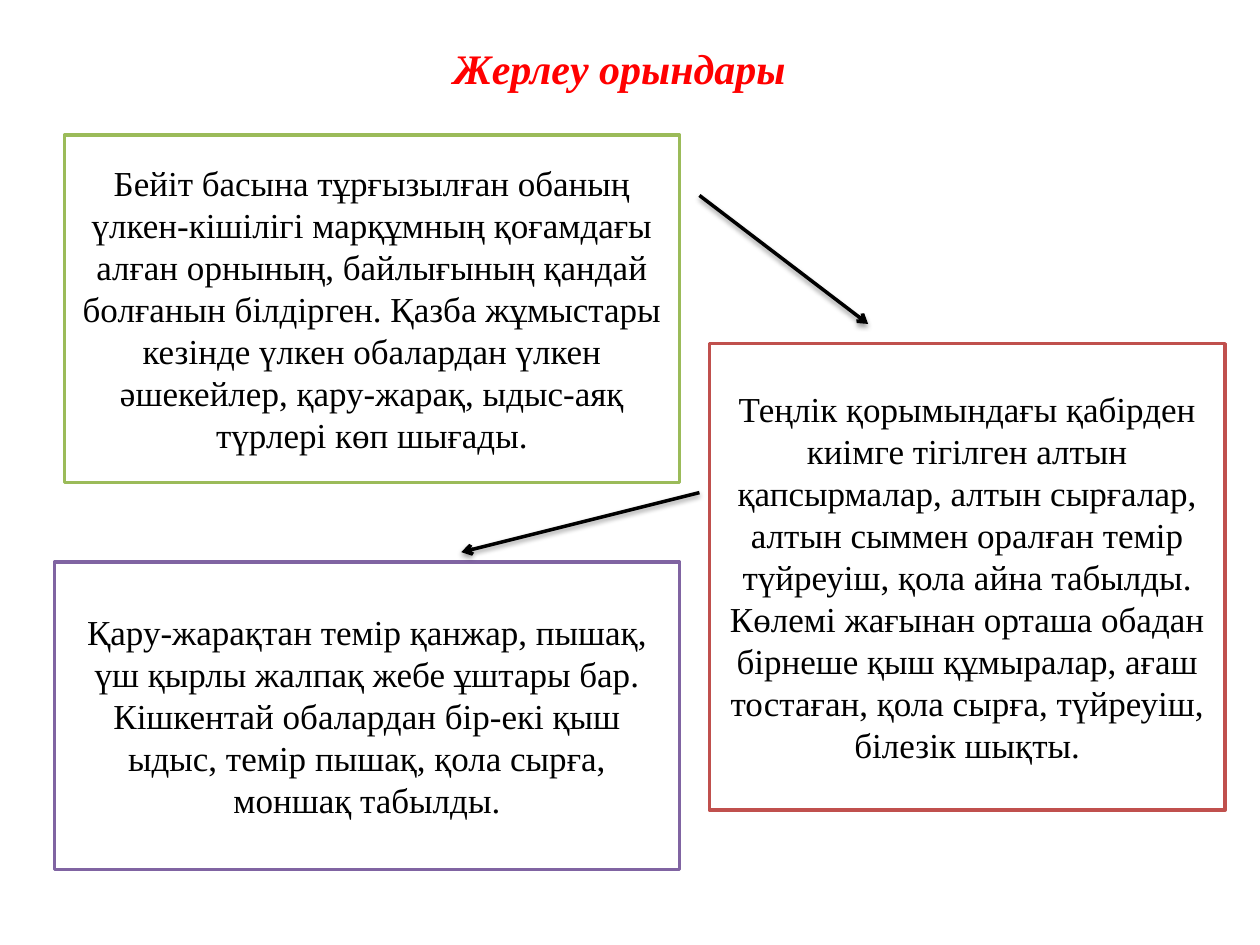
from lxml import etree
from pptx import Presentation
from pptx.dml.color import RGBColor
from pptx.enum.shapes import MSO_CONNECTOR, MSO_SHAPE
from pptx.enum.text import MSO_ANCHOR, MSO_AUTO_SIZE, PP_ALIGN
from pptx.oxml import parse_xml
from pptx.oxml.ns import qn
from pptx.util import Cm, Pt

RECTANGLE = MSO_SHAPE.RECTANGLE
STRAIGHT = MSO_CONNECTOR.STRAIGHT
MIDDLE = MSO_ANCHOR.MIDDLE
CENTER = PP_ALIGN.CENTER
FIT_SHAPE = MSO_AUTO_SIZE.SHAPE_TO_FIT_TEXT

FONT = "Times New Roman"
COLORS = {
    "title": "FF0000",
    "text": "000000",
    "paper": "FFFFFF",
    "arrow": "000000",
    "green": "9BBB59",
    "red": "C0504D",
    "purple": "8064A2",
}
SHADOW = (
    '<a:effectLst xmlns:a="http://schemas.openxmlformats.org/drawingml/2006/main">'
    '<a:outerShdw blurRad="{blur}" dist="{distance}" dir="5400000" rotWithShape="0">'
    '<a:srgbClr val="{color}"><a:alpha val="38000"/></a:srgbClr>'
    "</a:outerShdw></a:effectLst>"
)

TITLE = "Жерлеу орындары"
CARDS = [
    ("green", (1.3, 2.72, 12.4, 7.01),
     "Бейіт басына тұрғызылған обаның үлкен-кішілігі марқұмның қоғамдағы "
     "алған орнының, байлығының қандай болғанын білдірген. Қазба жұмыстары "
     "кезінде үлкен обалардан үлкен əшекейлер, қару-жарақ, ыдыс-аяқ "
     "түрлері көп шығады."),
    ("red", (14.3, 6.93, 10.4, 9.4),
     "Теңлік қорымындағы қабірден киімге тігілген алтын қапсырмалар, алтын "
     "сырғалар, алтын сыммен оралған темір түйреуіш, қола айна табылды. "
     "Көлемі жағынан орташа обадан бірнеше қыш құмыралар, ағаш тостаған, "
     "қола сырға, түйреуіш, білезік шықты."),
    ("purple", (1.1, 11.33, 12.6, 6.2),
     "Қару-жарақтан темір қанжар, пышақ, үш қырлы жалпақ жебе ұштары бар. "
     "Кішкентай обалардан бір-екі қыш ыдыс, темір пышақ, қола сырға, "
     "моншақ табылды."),
]
ARROWS = [
    ((14.1, 3.94), (17.5, 6.53)),
    ((14.1, 9.93), (9.3, 11.13)),
]


def color(name):
    """Return the named colour."""
    return RGBColor.from_string(COLORS[name])


def write(paragraph, text, size, color_name):
    """Fill a paragraph with text in the slide's typeface."""
    paragraph.text = text
    paragraph.font.name = FONT
    paragraph.font.size = Pt(size)
    paragraph.font.color.rgb = color(color_name)


def add_title(slide, box):
    """Place the heading in the given box."""
    shape = slide.shapes.add_textbox(*map(Cm, box))
    shape.text_frame.word_wrap = False
    shape.text_frame.auto_size = FIT_SHAPE
    paragraph = shape.text_frame.paragraphs[0]
    write(paragraph, TITLE, 24, "title")
    paragraph.font.bold = True
    paragraph.font.italic = True


def add_card(slide, box, border, text):
    """Place an outlined card with centred text in the given box."""
    shape = slide.shapes.add_shape(RECTANGLE, *map(Cm, box))
    shape.shadow.inherit = False
    shape.fill.solid()
    shape.fill.fore_color.rgb = color("paper")
    shape.line.color.rgb = color(border)
    shape.line.width = Pt(2)
    shape.text_frame.word_wrap = True
    shape.text_frame.vertical_anchor = MIDDLE
    paragraph = shape.text_frame.paragraphs[0]
    paragraph.alignment = CENTER
    write(paragraph, text, 20, "text")


def add_arrow(slide, start, end):
    """Draw an arrow with a soft shadow between two points."""
    connector = slide.shapes.add_connector(STRAIGHT, *map(Cm, start + end))
    connector.line.color.rgb = color("arrow")
    connector.line.width = Pt(2)
    properties = connector._element.spPr
    etree.SubElement(properties.find(qn("a:ln")), qn("a:tailEnd"), type="arrow")
    shadow = SHADOW.format(blur=Pt(3.1), distance=Pt(1.6), color=COLORS["arrow"])
    properties.append(parse_xml(shadow))


def build_slide(presentation):
    """Add the slide with its title, cards and arrows."""
    slide = presentation.slides.add_slide(presentation.slide_layouts[6])
    add_title(slide, (8.89, 0.74, 7.26, 1.27))
    for border, box, text in CARDS:
        add_card(slide, box, border, text)
    for start, end in ARROWS:
        add_arrow(slide, start, end)


def main():
    """Build and save the presentation."""
    presentation = Presentation()
    presentation.slide_width = Cm(25.4)
    presentation.slide_height = Cm(19.05)
    build_slide(presentation)
    presentation.save("out.pptx")


if __name__ == "__main__":
    main()
